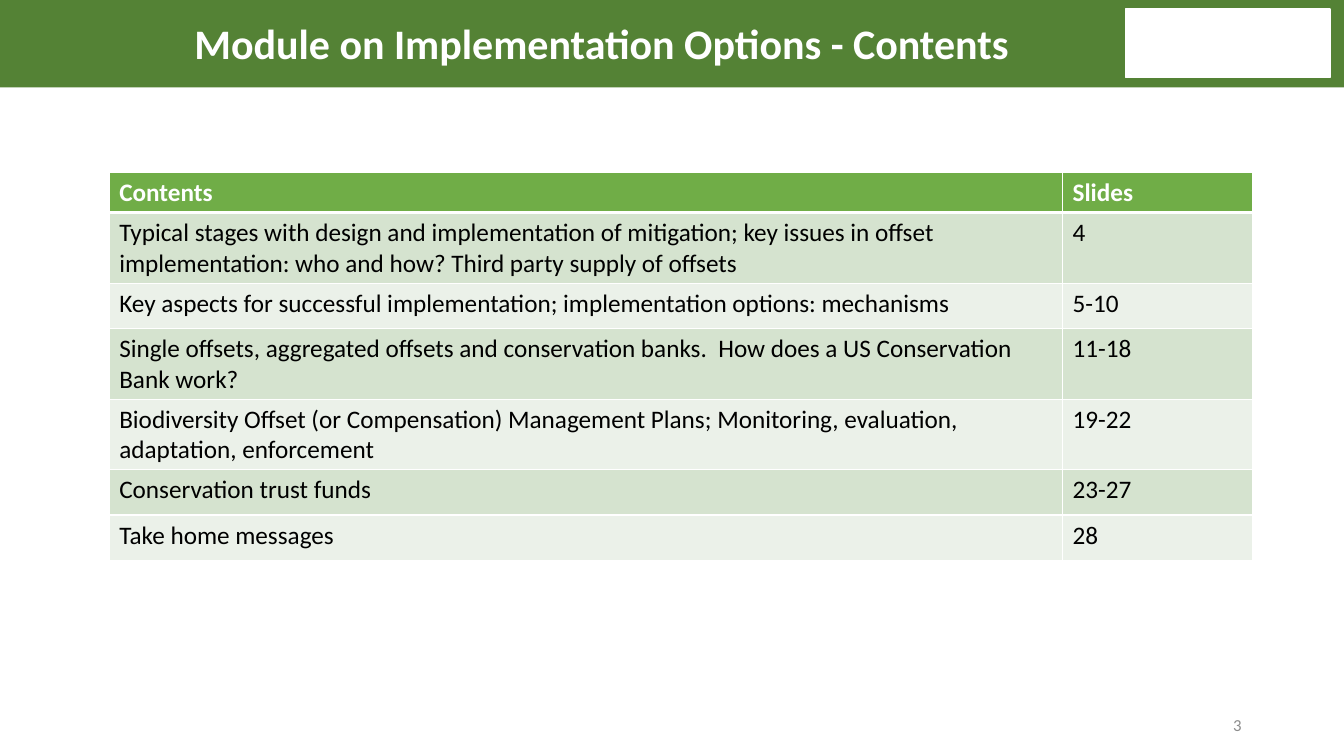
import pptx
import pptx.util
import pptx.dml.color
import pptx.enum.shapes
import pptx.enum.text
import pptx.oxml
import pptx.oxml.ns

Pt = pptx.util.Pt
ALIGN = pptx.enum.text.PP_ALIGN
MIDDLE = pptx.enum.text.MSO_ANCHOR.MIDDLE

TITLE = "Module on Implementation Options - Contents"
PAGE = "3"
HEADINGS = ("Contents", "Slides")
TOPICS = [
    ("Typical stages with design and implementation of mitigation; key issues in offset "
     "implementation: who and how? Third party supply of offsets", "4"),
    ("Key aspects for successful implementation; implementation options: mechanisms", "5-10"),
    ("Single offsets, aggregated offsets and conservation banks.  How does a US Conservation "
     "Bank work?", "11-18"),
    ("Biodiversity Offset (or Compensation) Management Plans; Monitoring, evaluation, "
     "adaptation, enforcement", "19-22"),
    ("Conservation trust funds", "23-27"),
    ("Take home messages", "28"),
]
WHITE, BLACK, GREY = "FFFFFF", "000000", "8C8C8C"
BANNER_GREEN, HEADING_GREEN = "548235", "70AD47"
BANDS = ("D5E3CF", "EBF1E9")
COLUMN_WIDTHS = (681, 135.5)
HEADING_HEIGHT, TOPIC_HEIGHT = 15, 32.4


def color(hex_code):
    return pptx.dml.color.RGBColor.from_string(hex_code)


def write(frame, text, size=18, ink=BLACK, bold=False, align=ALIGN.LEFT, spacing=None):
    paragraph = frame.paragraphs[0]
    paragraph.alignment = align
    paragraph.line_spacing = spacing
    run = paragraph.add_run()
    run.text = text
    run.font.name = "Calibri"
    run.font.size = Pt(size)
    run.font.bold = bold
    run.font.color.rgb = color(ink)


def add_block(slide, left, top, width, height, fill, outlined=False):
    block = slide.shapes.add_shape(
        pptx.enum.shapes.MSO_SHAPE.RECTANGLE, Pt(left), Pt(top), Pt(width), Pt(height))
    block.shadow.inherit = False
    block.fill.solid()
    block.fill.fore_color.rgb = color(fill)
    if outlined:
        block.line.color.rgb = color(fill)
        block.line.width = Pt(1)
    else:
        block.line.fill.background()


def add_label(slide, left, top, width, height, text, **style):
    frame = slide.shapes.add_textbox(Pt(left), Pt(top), Pt(width), Pt(height)).text_frame
    frame.word_wrap = True
    frame.vertical_anchor = MIDDLE
    write(frame, text, **style)


def set_borders(cell, top, bottom):
    properties = cell._tc.get_or_add_tcPr()
    for index, (side, width) in enumerate((("L", 1), ("R", 1), ("T", top), ("B", bottom))):
        properties.insert(index, pptx.oxml.parse_xml(
            f'<a:ln{side} {pptx.oxml.ns.nsdecls("a")} w="{Pt(width)}"><a:solidFill>'
            f'<a:srgbClr val="{WHITE}"/></a:solidFill></a:ln{side}>'))


def add_contents(slide, left, top):
    rows = [HEADINGS] + TOPICS
    height = HEADING_HEIGHT + TOPIC_HEIGHT * len(TOPICS)
    contents = slide.shapes.add_table(
        len(rows), len(HEADINGS), Pt(left), Pt(top), Pt(sum(COLUMN_WIDTHS)), Pt(height)).table
    for column, width in zip(contents.columns, COLUMN_WIDTHS):
        column.width = Pt(width)
    for index, row in enumerate(rows):
        heading = index == 0
        contents.rows[index].height = Pt(HEADING_HEIGHT if heading else TOPIC_HEIGHT)
        for place, text in enumerate(row):
            cell = contents.cell(index, place)
            cell.fill.solid()
            cell.fill.fore_color.rgb = color(HEADING_GREEN if heading else BANDS[(index - 1) % 2])
            set_borders(cell, top=3 if index == 1 else 1, bottom=3 if heading else 1)
            write(cell.text_frame, text, ink=WHITE if heading else BLACK, bold=heading)


def main():
    deck = pptx.Presentation()
    deck.slide_width, deck.slide_height = Pt(960), Pt(540)
    slide = deck.slides.add_slide(deck.slide_layouts[6])
    add_label(slide, 831, 507, 63, 22, PAGE, size=12, ink=GREY, align=ALIGN.RIGHT)
    add_block(slide, 0, -2.5, 960, 65, BANNER_GREEN)
    add_block(slide, 804, 6.5, 146, 49, WHITE, outlined=True)
    add_label(slide, 57.5, 0, 745, 65, TITLE, size=30, ink=WHITE, bold=True,
              align=ALIGN.CENTER, spacing=0.9)
    add_contents(slide, 78, 123)
    deck.save("out.pptx")


if __name__ == "__main__":
    main()
